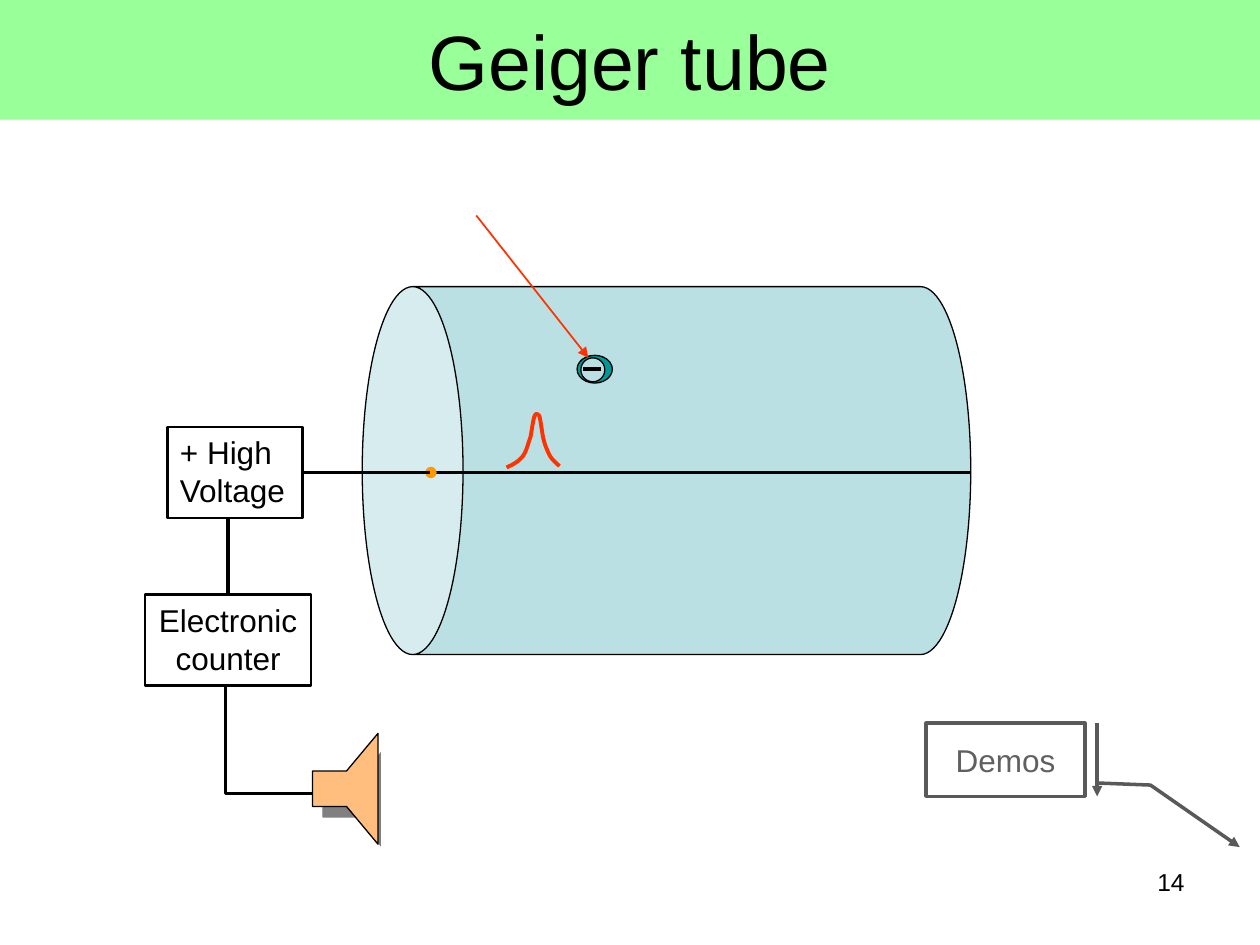
from lxml import etree
from pptx import Presentation
from pptx import util as u
from pptx.dml.color import RGBColor
from pptx.enum import shapes, text
from pptx.oxml.ns import qn

BLACK, RED, GREY, WHITE = "000000", "FF3300", "595959", "FFFFFF"
GAS, TEAL, ORANGE, PEACH, GREEN = "BBE0E3", "009999", "FF9900", "FFBE7D", "99FF99"
KIND = shapes.MSO_SHAPE
ALIGN = text.PP_ALIGN
RIGHT_SIDE, TOP_SIDE = 3, 0


def color(hex_code):
    return RGBColor.from_string(hex_code)


def set_line(shape, line, width):
    if line is None:
        shape.line.fill.background()
    else:
        shape.line.color.rgb = color(line)
        shape.line.width = u.Pt(width)


def set_fill(shape, fill):
    if fill is None:
        shape.fill.background()
    else:
        shape.fill.solid()
        shape.fill.fore_color.rgb = color(fill)


def add_arrowhead(shape):
    etree.SubElement(shape.line._get_or_add_ln(), qn("a:tailEnd"), type="triangle")


def add_preset(slide, kind, box, fill=None, line=BLACK, width=0.75):
    shape = slide.shapes.add_shape(kind, *map(u.Inches, box))
    shape.shadow.inherit = False
    set_fill(shape, fill)
    set_line(shape, line, width)
    return shape


def add_line(slide, start, end, line=BLACK, width=2.25):
    connector = slide.shapes.add_connector(
        shapes.MSO_CONNECTOR.STRAIGHT, *map(u.Inches, (*start, *end)))
    set_line(connector, line, width)
    etree.SubElement(connector._element.spPr, qn("a:effectLst"))
    return connector


def add_outline(slide, points, line, width, fill=None, close=False):
    start, *others = [(u.Inches(x), u.Inches(y)) for x, y in points]
    builder = slide.shapes.build_freeform(*start)
    builder.add_line_segments(others, close=close)
    shape = builder.convert_to_shape()
    shape.shadow.inherit = False
    set_fill(shape, fill)
    set_line(shape, line, width)
    return shape


def write(shape, lines, size=18, align=ALIGN.CENTER, anchor=text.MSO_ANCHOR.TOP,
          font_color=BLACK, wrap=True):
    frame = shape.text_frame
    frame.word_wrap = wrap
    frame.vertical_anchor = anchor
    for index, line in enumerate(lines):
        paragraph = frame.paragraphs[0] if index == 0 else frame.add_paragraph()
        paragraph.alignment = align
        run = paragraph.add_run()
        run.text = line
        run.font.name = "Arial"
        run.font.size = u.Pt(size)
        run.font.color.rgb = color(font_color)


def add_label_box(slide, box, lines, align):
    shape = add_preset(slide, KIND.RECTANGLE, box, width=1.5)
    write(shape, lines, align=align, wrap=False)
    shape.text_frame.auto_size = text.MSO_AUTO_SIZE.SHAPE_TO_FIT_TEXT
    return shape


def sample_curve(start, segments, steps=8):
    """Turn cubic Bezier segments (control, control, end) into points."""
    points = [start]
    for first, second, end in segments:
        corners = (points[-1], first, second, end)
        for step in range(1, steps + 1):
            t = step / steps
            weights = ((1 - t) ** 3, 3 * t * (1 - t) ** 2, 3 * t * t * (1 - t), t ** 3)
            points.append(tuple(sum(w * corner[axis] for w, corner in zip(weights, corners))
                                for axis in (0, 1)))
    return points


def add_tube(slide):
    tube = add_preset(slide, KIND.CAN, (3.83, 1.32, 2.92, 4.83), GAS)
    tube.rotation = 270
    tube.adjustments[0] = 0.274
    add_line(slide, (3.38, 3.75), (7.7, 3.75))
    add_preset(slide, KIND.OVAL, (3.38, 3.71, 0.08, 0.08), ORANGE, ORANGE)


def add_circuit(slide):
    supply = add_label_box(slide, (1.33, 3.39, 1.07, 0.72), ["+ High", "Voltage"], ALIGN.LEFT)
    counter = add_label_box(slide, (1.15, 4.72, 1.32, 0.72), ["Electronic", "counter"],
                            ALIGN.CENTER)
    add_line(slide, (3.41, 3.75), (2.4, 3.75), width=1.5).end_connect(supply, RIGHT_SIDE)
    add_line(slide, (1.81, 4.11), (1.81, 4.72)).end_connect(counter, TOP_SIDE)
    add_outline(slide, [(1.79, 5.44), (1.79, 6.3), (2.52, 6.3)], BLACK, 1.5)


def add_electron(slide):
    add_preset(slide, KIND.OVAL, (4.58, 2.82, 0.28, 0.22), TEAL)
    add_arrowhead(add_line(slide, (3.78, 1.71), (4.67, 2.84), RED, 1))
    add_preset(slide, KIND.OVAL, (4.61, 2.84, 0.19, 0.19), GAS)
    add_line(slide, (4.63, 2.93), (4.77, 2.93))


def add_pulse(slide):
    segments = [
        ((4.07, 3.69), (4.12, 3.66), (4.15, 3.62)),
        ((4.18, 3.58), (4.19, 3.52), (4.21, 3.47)),
        ((4.22, 3.42), (4.23, 3.34), (4.24, 3.31)),
        ((4.25, 3.28), (4.26, 3.28), (4.28, 3.3)),
        ((4.29, 3.33), (4.3, 3.42), (4.31, 3.47)),
        ((4.32, 3.52), (4.34, 3.57), (4.36, 3.61)),
        ((4.38, 3.65), (4.42, 3.68), (4.44, 3.7)),
    ]
    add_outline(slide, sample_curve((4.02, 3.71), segments), RED, 2.25)


def add_speaker(slide):
    points = [(2.48, 6.12), (2.75, 6.12), (3, 5.82), (3, 6.7), (2.75, 6.4), (2.48, 6.4)]
    speaker = add_outline(slide, points, BLACK, 0.75, PEACH, close=True)
    effects = speaker._element.spPr.find(qn("a:effectLst"))
    shadow = etree.SubElement(effects, qn("a:outerShdw"), dist=str(u.Pt(8.5)),
                              dir=str(45 * 60000), algn="ctr", rotWithShape="0")
    etree.SubElement(shadow, qn("a:srgbClr"), val="808080")
    # White panel trims the shadow beside the cone
    add_preset(slide, KIND.RECTANGLE, (3.04, 5.74, 0.8, 1.07), WHITE, WHITE, 2)


def add_demos_callout(slide):
    callout = add_preset(slide, KIND.LINE_CALLOUT_2_BORDER_AND_ACCENT_BAR,
                         (7.35, 5.74, 1.26, 0.58), WHITE, GREY, 2)
    for index, value in enumerate((0.818, 1.078, 0.846, 1.414, 1.695, 1.976)):
        callout.adjustments[index] = value
    add_arrowhead(callout)
    write(callout, ["Demos"], anchor=text.MSO_ANCHOR.MIDDLE, font_color="606060")


def main():
    presentation = Presentation()
    presentation.slide_width, presentation.slide_height = u.Inches(10), u.Inches(7.5)
    slide = presentation.slides.add_slide(presentation.slide_layouts[6])
    add_tube(slide)
    add_circuit(slide)
    title = add_preset(slide, KIND.RECTANGLE, (0, 0, 10, 0.95), GREEN, None)
    write(title, ["Geiger tube"], 44, anchor=text.MSO_ANCHOR.MIDDLE)
    add_electron(slide)
    add_pulse(slide)
    add_speaker(slide)
    number = slide.shapes.add_textbox(*map(u.Inches, (9.02, 6.83, 0.48, 0.52)))
    write(number, ["14"], 14, ALIGN.RIGHT)
    add_demos_callout(slide)
    presentation.save("out.pptx")


if __name__ == "__main__":
    main()
